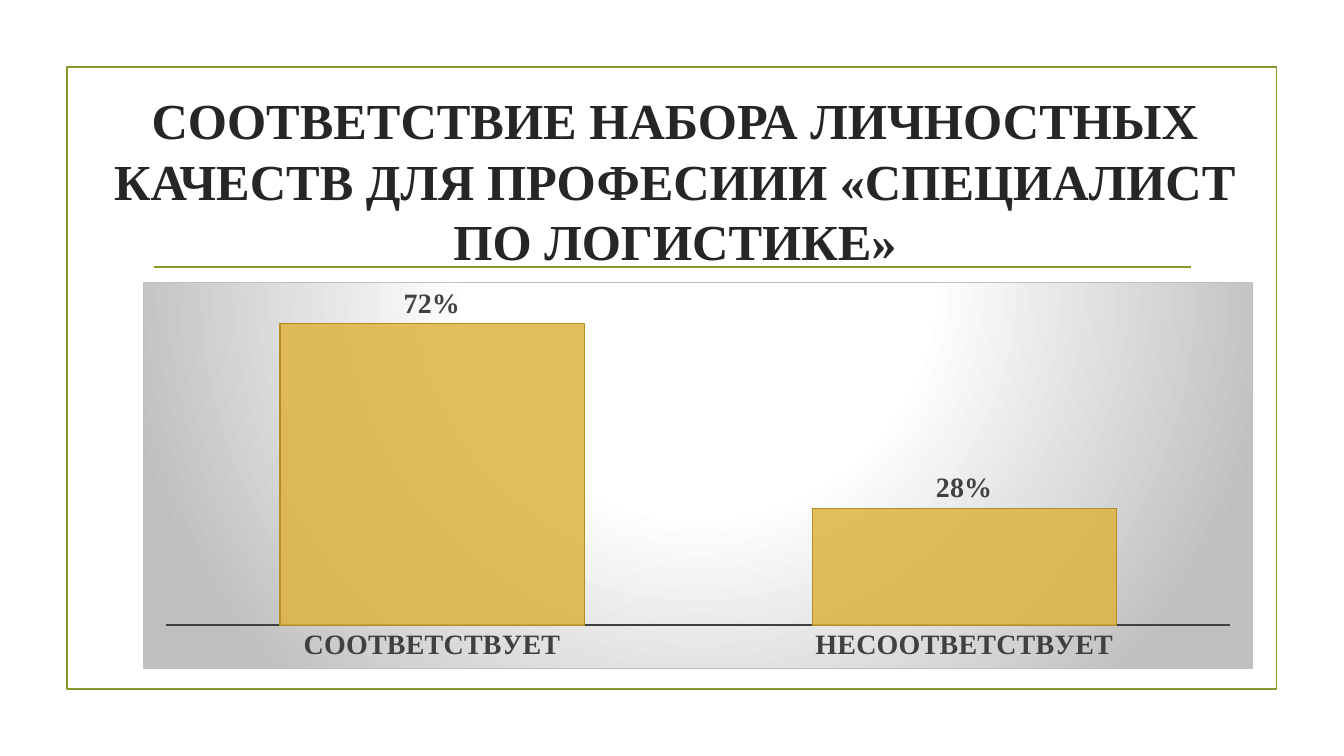
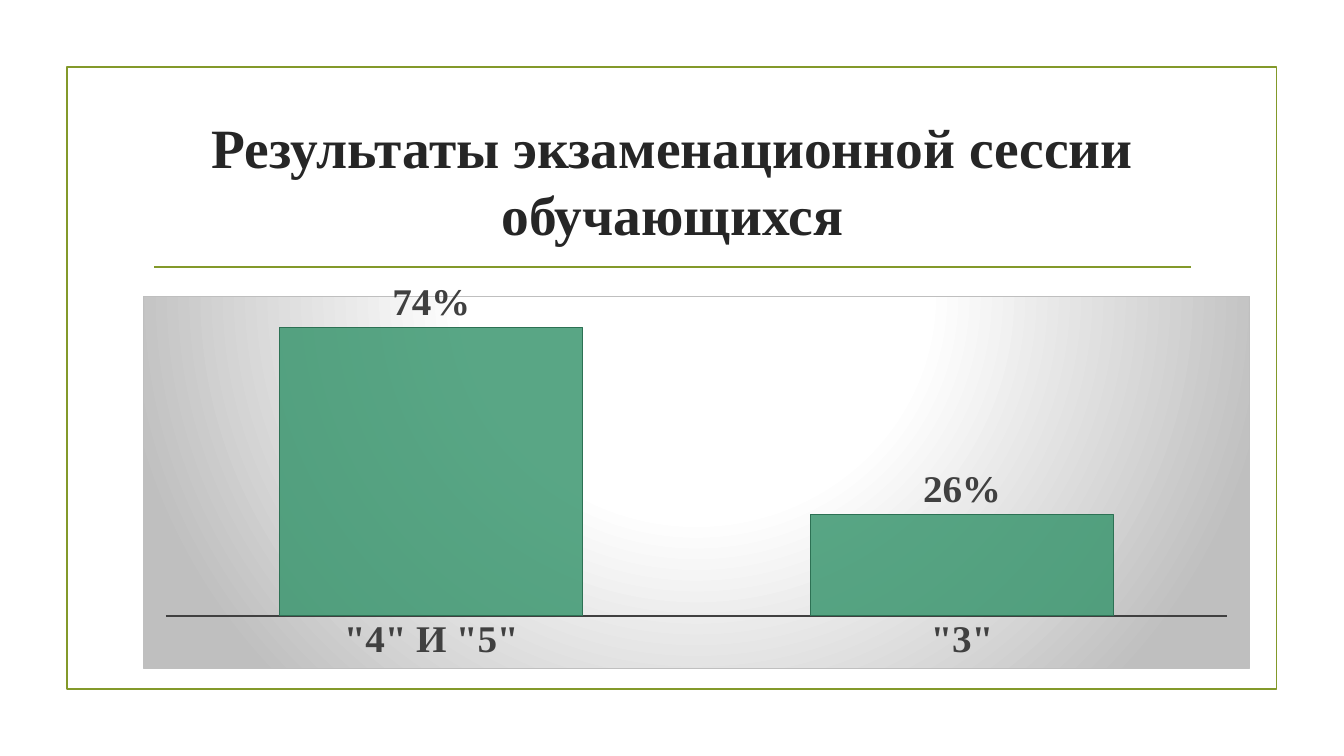
"""Build two slides, each with a framed title and a column chart of percentages."""
from lxml import etree
from pptx import Presentation
from pptx.chart import data as chart_data
from pptx.dml.color import RGBColor
from pptx.enum import chart as charts, shapes, text
from pptx.oxml import ns, parse_xml
from pptx.util import Cm, Pt

FONT = "Times New Roman"
OLIVE = RGBColor(0x83, 0x99, 0x2A)
INK = RGBColor(0x26, 0x26, 0x26)
GRAY = RGBColor(0x40, 0x40, 0x40)
BLACK = RGBColor(0, 0, 0)
WHITE = RGBColor(0xFF, 0xFF, 0xFF)
SILVER = RGBColor(0xBF, 0xBF, 0xBF)
GOLD = RGBColor(0xDE, 0xB3, 0x40)
DARK_GOLD = RGBColor(0xB7, 0x8E, 0x20)
GREEN = RGBColor(0x3C, 0x97, 0x70)
DARK_GREEN = RGBColor(0x2D, 0x71, 0x54)

FRAME = Cm(1.69), Cm(1.69), Cm(30.48), Cm(15.67)
RULE = Cm(3.89), Cm(6.73), Cm(30.01), Cm(6.73)
TITLE_TOP, TITLE_HEIGHT = Cm(2.72), Cm(3.63)
CHART_LEFT, CHART_TOP, CHART_HEIGHT = Cm(3.61), Cm(7.11), Cm(9.75)
BACKDROP_STOPS = (0, WHITE), (39, WHITE), (100, SILVER)

SLIDES = [
    dict(
        title="СООТВЕТСТВИЕ НАБОРА ЛИЧНОСТНЫХ КАЧЕСТВ ДЛЯ ПРОФЕСИИИ «СПЕЦИАЛИСТ ПО ЛОГИСТИКЕ»",
        title_left=Cm(2.46), title_width=Cm(29.11), title_size=36,
        values={"СООТВЕТСТВУЕТ": 0.72, "НЕСООТВЕТСТВУЕТ": 0.28},
        chart_width=Cm(27.97), label_size=20, fill=GOLD, outline=DARK_GOLD,
    ),
    dict(
        title="Результаты экзаменационной сессии обучающихся",
        title_left=Cm(3.61), title_width=Cm(26.67), title_size=39.6,
        values={'"4" И "5"': 0.74, '"3"': 0.26},
        chart_width=Cm(27.89), label_size=28, fill=GREEN, outline=DARK_GREEN,
    ),
]


def set_font(font, size, color, bold=True):
    font.name, font.size, font.bold = FONT, Pt(size), bold
    font.color.rgb = color


def set_line(line, color, width):
    line.color.rgb = color
    line.width = Pt(width)


def add_text(page, content, *, left, top, width, height, size, color):
    box = page.shapes.add_textbox(left, top, width, height)
    frame = box.text_frame
    frame.word_wrap = True
    frame.vertical_anchor = text.MSO_ANCHOR.MIDDLE
    para = frame.paragraphs[0]
    para.alignment = text.PP_ALIGN.CENTER
    span = para.add_run()
    span.text = content
    set_font(span.font, size, color)


def add_frame(page):
    border = page.shapes.add_shape(shapes.MSO_SHAPE.RECTANGLE, *FRAME)
    border.shadow.inherit = False
    border.fill.background()
    set_line(border.line, OLIVE, 1.25)
    rule = page.shapes.add_connector(shapes.MSO_CONNECTOR.STRAIGHT, *RULE)
    set_line(rule.line, OLIVE, 1.25)
    etree.SubElement(rule._element.spPr, ns.qn("a:effectLst"))


def add_backdrop(chart):
    stops = "".join(
        f'<a:gs pos="{place * 1000}"><a:srgbClr val="{color}"/></a:gs>'
        for place, color in BACKDROP_STOPS
    )
    backdrop = parse_xml(
        f'<c:spPr {ns.nsdecls("c", "a")}><a:gradFill><a:gsLst>{stops}</a:gsLst>'
        '<a:path path="circle"><a:fillToRect l="50000" t="-80000" r="50000" b="180000"/></a:path>'
        f'</a:gradFill><a:ln w="{Pt(0.75)}"><a:solidFill><a:srgbClr val="{SILVER}"/>'
        "</a:solidFill></a:ln></c:spPr>"
    )
    chart._chartSpace.find(ns.qn("c:chart")).addnext(backdrop)


def add_columns(page, values, *, width, size, fill, outline):
    table = chart_data.CategoryChartData(number_format="0%")
    table.categories = list(values)
    table.add_series("Series 1", list(values.values()))
    chart = page.shapes.add_chart(
        charts.XL_CHART_TYPE.COLUMN_CLUSTERED,
        CHART_LEFT, CHART_TOP, width, CHART_HEIGHT, table,
    ).chart
    chart.has_legend = chart.has_title = False
    set_font(chart.font, 10, BLACK, bold=False)
    add_backdrop(chart)

    axis = chart.category_axis
    axis.major_tick_mark = axis.minor_tick_mark = charts.XL_TICK_MARK.NONE
    set_font(axis.tick_labels.font, size, GRAY)
    set_line(axis.format.line, GRAY, 1.5)
    scale = chart.value_axis
    scale.visible = scale.has_major_gridlines = False
    scale.minimum_scale, scale.maximum_scale = 0, 0.8

    plot = chart.plots[0]
    plot.gap_width = 75
    plot.vary_by_categories = False
    series = plot.series[0]
    series.format.fill.solid()
    series.format.fill.fore_color.rgb = fill
    color = series.format.fill._xPr.find(".//" + ns.qn("a:srgbClr"))
    etree.SubElement(color, ns.qn("a:alpha"), val="85000")
    set_line(series.format.line, outline, 0.75)

    labels = series.data_labels
    labels.show_value = True
    labels.number_format, labels.number_format_is_linked = "0%", False
    labels.position = charts.XL_LABEL_POSITION.OUTSIDE_END
    set_font(labels.font, size, GRAY)


def main():
    deck = Presentation()
    deck.slide_width, deck.slide_height = Cm(33.87), Cm(19.05)
    for item in SLIDES:
        page = deck.slides.add_slide(deck.slide_layouts[6])
        add_frame(page)
        add_text(page, item["title"], left=item["title_left"], top=TITLE_TOP,
                 width=item["title_width"], height=TITLE_HEIGHT,
                 size=item["title_size"], color=INK)
        add_columns(page, item["values"], width=item["chart_width"],
                    size=item["label_size"], fill=item["fill"], outline=item["outline"])
    deck.save("out.pptx")


if __name__ == "__main__":
    main()
